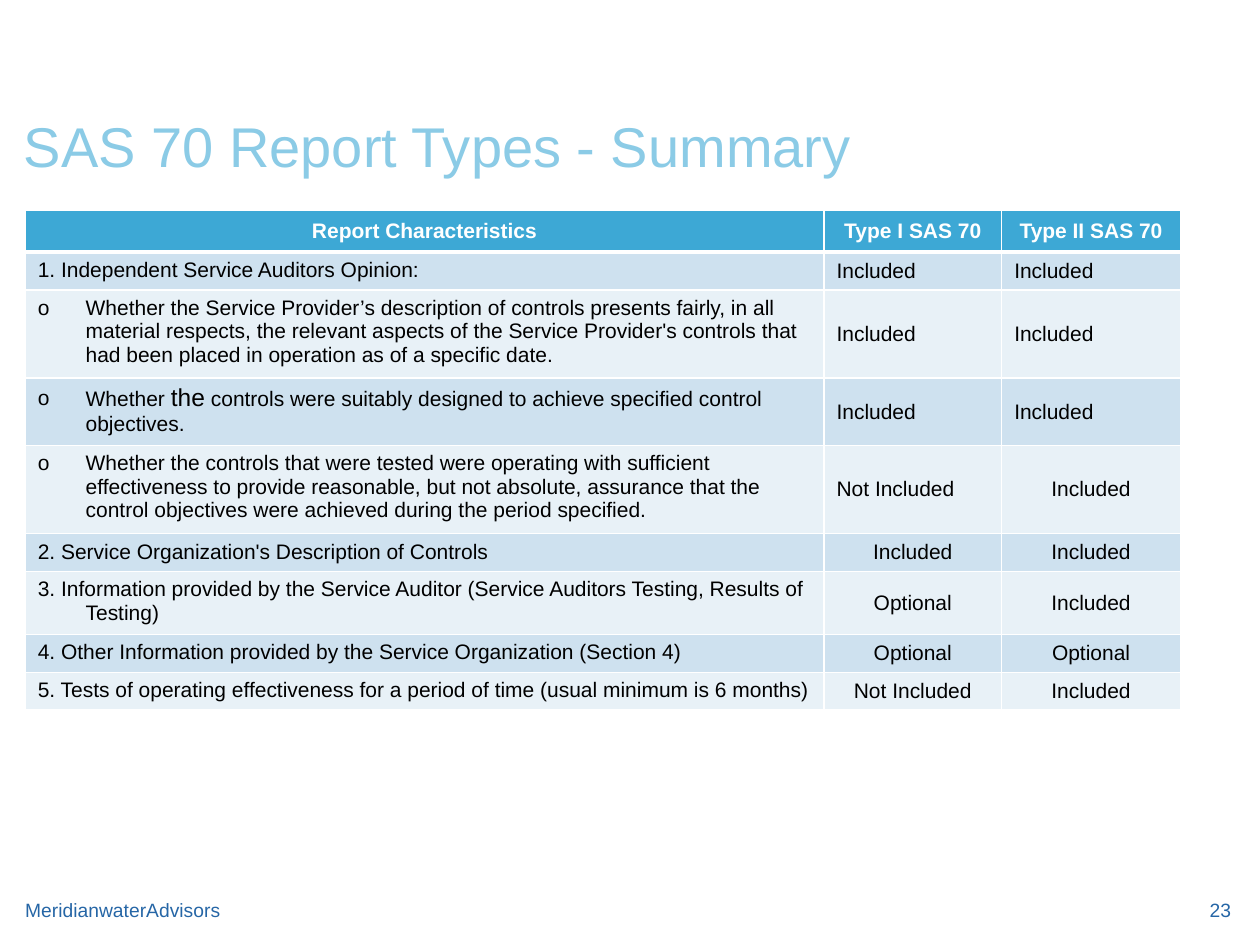
from lxml.etree import SubElement
from pptx import Presentation
from pptx.dml.color import RGBColor
from pptx.enum.text import MSO_ANCHOR, PP_ALIGN
from pptx.oxml import parse_xml
from pptx.oxml.ns import nsdecls, qn
from pptx.util import Inches, Pt

WHITE = RGBColor(0xFF, 0xFF, 0xFF)
BLACK = RGBColor(0x00, 0x00, 0x00)
TITLE_BLUE = RGBColor(0x8B, 0xCB, 0xE6)
FOOTER_BLUE = RGBColor(0x26, 0x66, 0xA6)
HEADER_BLUE = RGBColor(0x3D, 0xA8, 0xD5)
BANDS = [RGBColor(0xE8, 0xF1, 0xF7), RGBColor(0xCE, 0xE1, 0xEF)]

LEFT, CENTER, RIGHT, JUSTIFY = PP_ALIGN.LEFT, PP_ALIGN.CENTER, PP_ALIGN.RIGHT, PP_ALIGN.JUSTIFY
HEADER = {"size": Pt(12), "bold": True, "color": WHITE}
BODY = {"size": Pt(12), "bold": False, "color": BLACK}
LARGER = BODY | {"size": Pt(14)}
TITLE = {"size": Pt(32), "color": TITLE_BLUE}
FOOTER = {"size": Pt(11), "color": FOOTER_BLUE}

COLUMN_WIDTHS = [6.34, 1.41, 1.42]
HEADINGS = ["Report Characteristics", "Type I SAS 70", "Type II SAS 70"]
# Height, bulleted, alignment of each column, texts
ROWS = [
    (0.29, False, (LEFT, LEFT, LEFT),
     ("1. Independent Service Auditors Opinion:", "Included", "Included")),
    (0.66, True, (LEFT, LEFT, LEFT),
     ("Whether the Service Provider’s description of controls presents fairly, in all "
      "material respects, the relevant aspects of the Service Provider's controls that "
      "had been placed in operation as of a specific date.", "Included", "Included")),
    (0.5, True, (LEFT, LEFT, LEFT),
     ([("Whether ", BODY), ("the", LARGER),
       (" controls were suitably designed to achieve specified control objectives.", BODY)],
      "Included", "Included")),
    (0.66, True, (LEFT, LEFT, CENTER),
     ("Whether the controls that were tested were operating with sufficient "
      "effectiveness to provide reasonable, but not absolute, assurance that the "
      "control objectives were achieved during the period specified.",
      "Not Included", "Included")),
    (0.29, False, (LEFT, CENTER, CENTER),
     ("2. Service Organization's Description of Controls", "Included", "Included")),
    (0.48, False, (LEFT, CENTER, CENTER),
     ("3. Information provided by the Service Auditor (Service Auditors Testing, "
      "Results of Testing)", "Optional", "Included")),
    (0.29, False, (JUSTIFY, CENTER, CENTER),
     ("4. Other Information provided by the Service Organization (Section 4)",
      "Optional", "Optional")),
    (0.29, False, (JUSTIFY, CENTER, CENTER),
     ("5. Tests of operating effectiveness for a period of time "
      "(usual minimum is 6 months)", "Not Included", "Included")),
]
HEADER_HEIGHT = 0.33


def add_span(para, text, style):
    span = para.add_run()
    span.text = text
    span.font.name = "Arial"
    for name, value in style.items():
        if name == "color":
            span.font.color.rgb = value
        else:
            setattr(span.font, name, value)


def add_text(page, place, text, style, anchor, align=LEFT):
    frame = page.shapes.add_textbox(*map(Inches, place)).text_frame
    settings = {"word_wrap": True, "vertical_anchor": anchor, "margin_left": 0,
                "margin_right": 0, "margin_top": 0, "margin_bottom": 0}
    for name, value in settings.items():
        setattr(frame, name, value)
    para = frame.paragraphs[0]
    para.alignment = align
    add_span(para, text, style)


def set_hanging_indent(para, bulleted):
    properties = para._p.get_or_add_pPr()
    properties.set("marL", str(Inches(0.38)))
    properties.set("indent", str(-Inches(0.38)))
    if bulleted:
        SubElement(properties, qn("a:buFont")).set("typeface", "Arial")
        SubElement(properties, qn("a:buChar")).set("char", "o")


def set_borders(cell, bottom):
    """Draw white cell borders, with the bottom one of the given points."""
    properties = cell._tc.get_or_add_tcPr()
    widths = {"lnL": 1, "lnR": 1, "lnT": 1, "lnB": bottom}
    for index, (side, width) in enumerate(widths.items()):
        properties.insert(index, parse_xml(
            f'<a:{side} {nsdecls("a")} w="{Pt(width)}"><a:solidFill>'
            f'<a:srgbClr val="{WHITE}"/></a:solidFill></a:{side}>'))


def fill_cell(cell, spans, align, anchor, color, bulleted=False, bottom=1):
    cell.fill.solid()
    cell.fill.fore_color.rgb = color
    cell.vertical_anchor = anchor
    set_borders(cell, bottom)
    para = cell.text_frame.paragraphs[0]
    para.alignment = align
    set_hanging_indent(para, bulleted)
    for text, style in spans:
        add_span(para, text, style)


def add_report_table(page):
    heights = [HEADER_HEIGHT] + [row[0] for row in ROWS]
    table = page.shapes.add_table(
        len(heights), len(COLUMN_WIDTHS), Inches(0.2), Inches(1.67),
        Inches(sum(COLUMN_WIDTHS)), Inches(sum(heights))).table
    for column, width in zip(table.columns, COLUMN_WIDTHS):
        column.width = Inches(width)
    for row, height in zip(table.rows, heights):
        row.height = Inches(height)
    for index, heading in enumerate(HEADINGS):
        fill_cell(table.cell(0, index), [(heading, HEADER)], CENTER,
                  MSO_ANCHOR.MIDDLE, HEADER_BLUE, bottom=3)
    for number, (_, bulleted, aligns, texts) in enumerate(ROWS, start=1):
        for index, (text, align) in enumerate(zip(texts, aligns)):
            first = index == 0
            spans = [(text, BODY)] if isinstance(text, str) else text
            fill_cell(table.cell(number, index), spans, align,
                      MSO_ANCHOR.TOP if first else MSO_ANCHOR.MIDDLE,
                      BANDS[number % 2], bulleted and first)


def main():
    deck = Presentation()
    deck.slide_width, deck.slide_height = Inches(10), Inches(7.5)
    page = deck.slides.add_slide(deck.slide_layouts[6])
    add_text(page, (0.2, 7.13, 3.2, 0.19), "MeridianwaterAdvisors", FOOTER, MSO_ANCHOR.TOP)
    add_text(page, (0.19, 0.17, 9.63, 1.25), "SAS 70 Report Types - Summary",
             TITLE, MSO_ANCHOR.BOTTOM)
    add_text(page, (7.44, 7.14, 2.33, 0.16), "23", FOOTER, MSO_ANCHOR.MIDDLE, RIGHT)
    add_report_table(page)
    deck.save("out.pptx")


if __name__ == "__main__":
    main()
